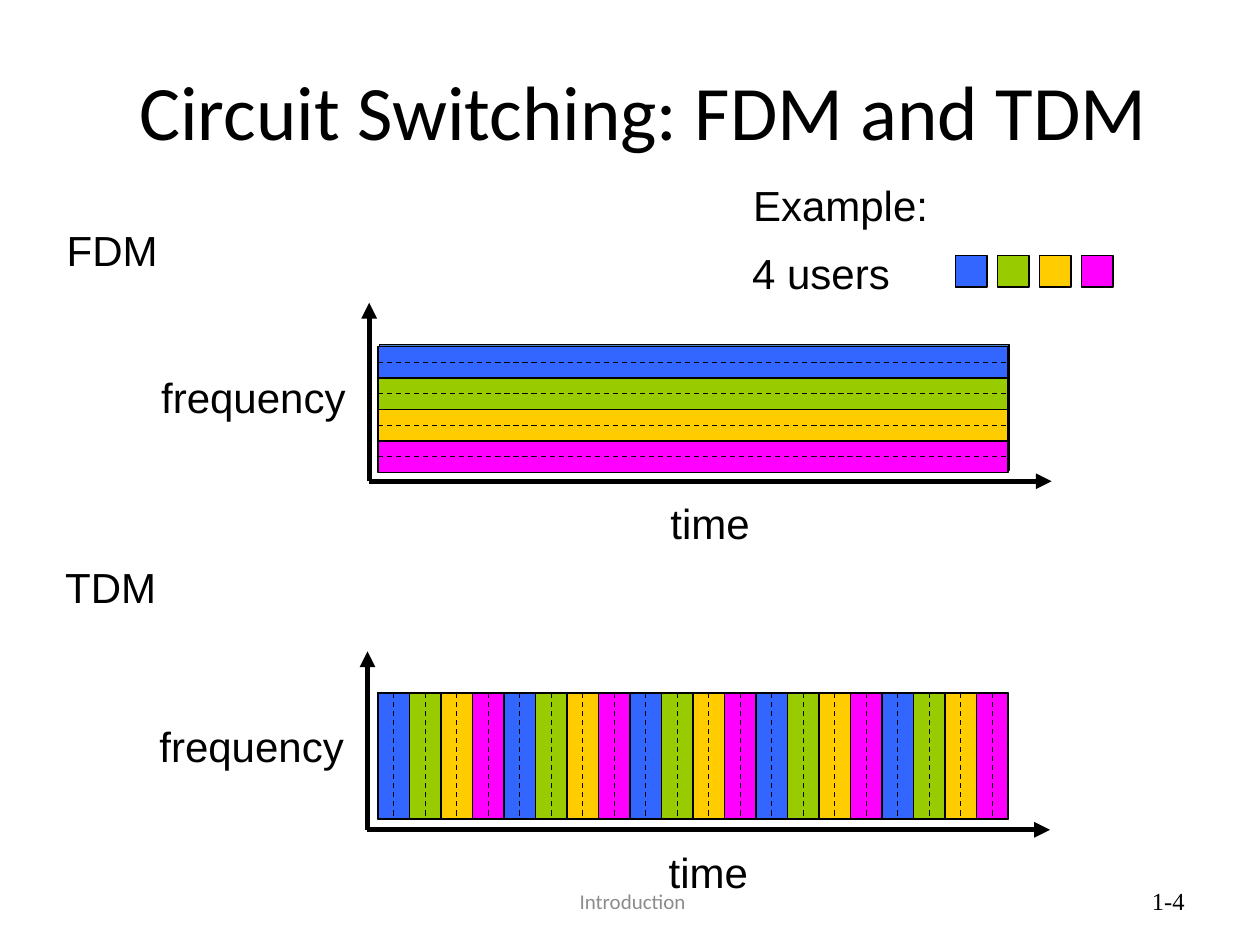
"""Build a slide comparing frequency-division and time-division multiplexing."""
from lxml import etree
from pptx import Presentation
from pptx import util as u
from pptx.dml import color
from pptx.enum import dml, shapes, text
from pptx.oxml import ns

TITLE = "Circuit Switching: FDM and TDM"
USERS = ["3366FF", "99CC00", "FFCC00", "FF00FF"]
BLACK, BACKING = "000000", "4F81BD"
SLOT, PLOT_LEFT, PLOT_WIDTH, PLOT_HEIGHT = 18, 216, 360, 72
PLOTS = [
    {"name": "FDM", "top": 198, "origin": (211, 275), "backing": (216.7, 196.9),
     "label": (31, 124.5), "rows": True},
    {"name": "TDM", "top": 396, "origin": (210, 474.2), "backing": (216, 396),
     "label": (30.2, 317.6), "rows": False},
]
LEGEND = [("4 users", 422.7, 137.9, 93.6), ("Example:", 423.2, 99, 114.5)]
LEGEND_LEFT, LEGEND_TOP, LEGEND_STEP = 546, 146, 24
FOOTERS = [
    ("Introduction", (247.5, 500.5, 228, 28.8), "Calibri", 12, "8C8C8C", "CENTER"),
    ("1-4", (516, 500.5, 168, 28.8), "Times New Roman", 14, BLACK, "RIGHT"),
]


def rgb(value):
    return color.RGBColor.from_string(value)


def points(*lengths):
    return [u.Pt(length) for length in lengths]


def write(shape, words, font, size, fill=BLACK, align="LEFT"):
    shape.text_frame.text = words
    paragraph = shape.text_frame.paragraphs[0]
    paragraph.alignment = getattr(text.PP_ALIGN, align)
    run_font = paragraph.runs[0].font
    run_font.name, run_font.size = font, u.Pt(size)
    run_font.color.rgb = rgb(fill)


def add_label(slide, words, left, top, width):
    shape = slide.shapes.add_textbox(*points(left, top, width, 36))
    write(shape, words, "Arial", 24)
    shape.text_frame.word_wrap = False
    shape.text_frame.auto_size = text.MSO_AUTO_SIZE.SHAPE_TO_FIT_TEXT


def add_box(slide, left, top, width, height, fill):
    shape = slide.shapes.add_shape(
        shapes.MSO_SHAPE.RECTANGLE, *points(left, top, width, height))
    shape.shadow.inherit = False
    shape.fill.solid()
    shape.fill.fore_color.rgb = rgb(fill)
    shape.line.color.rgb = rgb(BLACK)
    shape.line.width = u.Pt(0.75)
    return shape


def add_line(slide, start, end, width=0.75, dashed=False, arrow=False):
    line = slide.shapes.add_connector(
        shapes.MSO_CONNECTOR.STRAIGHT, *points(*start, *end))
    line.line.color.rgb = rgb(BLACK)
    line.line.width = u.Pt(width)
    if dashed:
        line.line.dash_style = dml.MSO_LINE.DASH
    if arrow:
        etree.SubElement(line.line._get_or_add_ln(), ns.qn("a:tailEnd"), type="triangle")
    etree.SubElement(line._element.spPr, ns.qn("a:effectLst"))
    return line


def add_plot(slide, plot):
    left, top, rows = PLOT_LEFT, plot["top"], plot["rows"]
    origin_x, origin_y = plot["origin"]
    add_label(slide, plot["name"], *plot["label"], 67)
    add_line(slide, plot["origin"], (origin_x, origin_y - 102), 3, arrow=True)
    add_label(slide, "frequency", origin_x - 126, origin_y - 66.2, 120)
    add_line(slide, plot["origin"], (origin_x + 390, origin_y), 3, arrow=True)
    add_label(slide, "time", origin_x + 165, origin_y + 5.8, 60)
    add_box(slide, *plot["backing"], PLOT_WIDTH, PLOT_HEIGHT, BACKING)

    count = (PLOT_HEIGHT if rows else PLOT_WIDTH) // SLOT

    def slot_line(offset, dashed=False):
        if rows:
            start, end = (left, top + offset), (left + PLOT_WIDTH, top + offset)
        else:
            start, end = (left + offset, top), (left + offset, top + PLOT_HEIGHT)
        return add_line(slide, start, end, dashed=dashed)

    slots = []
    for index in range(count):
        offset = index * SLOT
        area = ((left, top + offset, PLOT_WIDTH, SLOT) if rows
                else (left + offset, top, SLOT, PLOT_HEIGHT))
        slots.append(add_box(slide, *area, USERS[index % len(USERS)]))
    for index in range(1, count):
        slot_line(index * SLOT)
    first_side, last_side = (1, 3) if rows else (0, 2)
    for index, slot in enumerate(slots):
        line = slot_line((index + 0.5) * SLOT, dashed=True)
        line.begin_connect(slot, first_side)
        line.end_connect(slot, last_side)


def main():
    presentation = Presentation()
    presentation.slide_width, presentation.slide_height = points(720, 540)
    slide = presentation.slides.add_slide(presentation.slide_layouts[5])

    title = slide.shapes.title
    title.left, title.top, title.width, title.height = points(34.3, 17.6, 667, 90)
    write(title, TITLE, "Calibri", 44, align="CENTER")
    title.text_frame.vertical_anchor = text.MSO_ANCHOR.MIDDLE

    for words, area, font, size, fill, align in FOOTERS:
        footer = slide.shapes.add_textbox(*points(*area))
        write(footer, words, font, size, fill, align)
        footer.text_frame.word_wrap = True
        footer.text_frame.vertical_anchor = text.MSO_ANCHOR.MIDDLE

    for plot in PLOTS:
        add_plot(slide, plot)

    for entry in LEGEND:
        add_label(slide, *entry)
    for index, fill in enumerate(USERS):
        add_box(slide, LEGEND_LEFT + index * LEGEND_STEP, LEGEND_TOP, SLOT, SLOT, fill)

    presentation.save("out.pptx")


if __name__ == "__main__":
    main()
